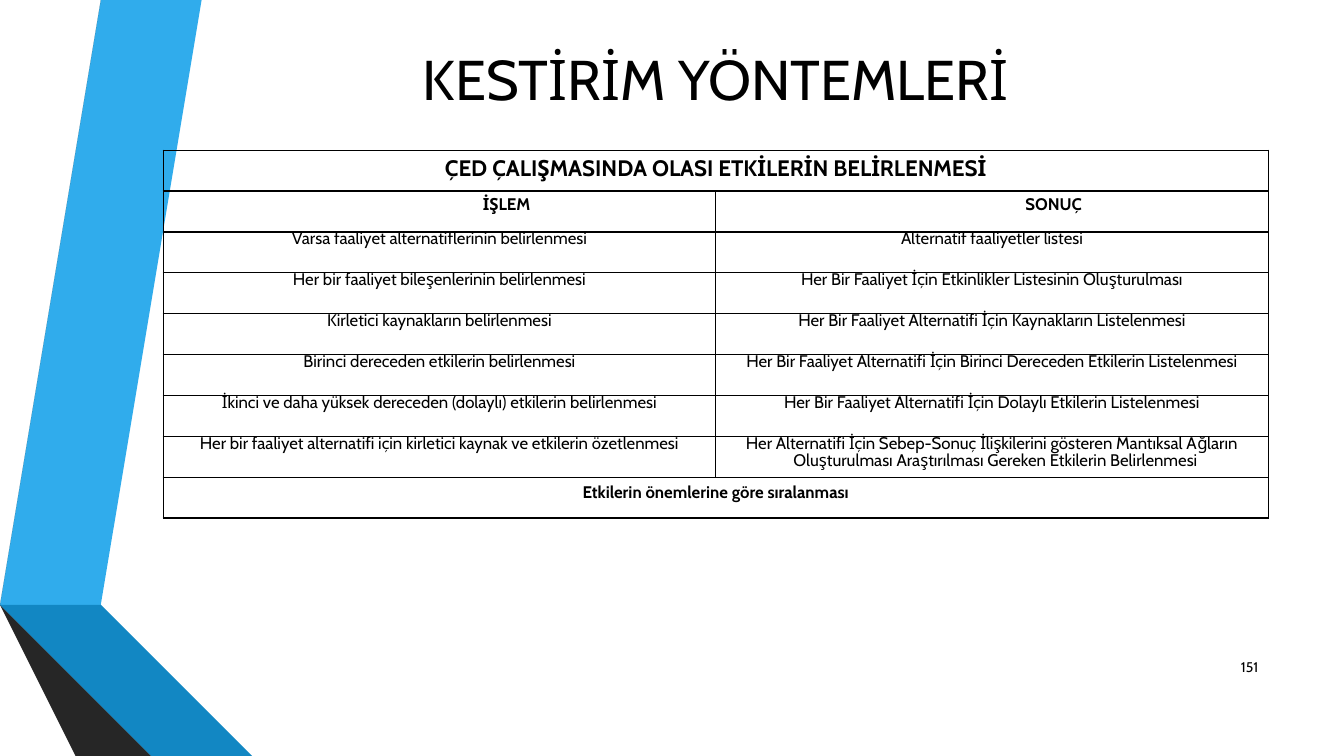
from lxml import etree
from pptx import Presentation
from pptx.dml.color import RGBColor
from pptx.enum.text import MSO_ANCHOR, PP_ALIGN
from pptx.oxml.ns import qn
from pptx.util import Inches, Pt

CENTER, RIGHT = PP_ALIGN.CENTER, PP_ALIGN.RIGHT
MIDDLE = MSO_ANCHOR.MIDDLE
BLACK = RGBColor(0x00, 0x00, 0x00)
SKY = RGBColor(0x30, 0xAC, 0xEC)
BLUE = RGBColor(0x12, 0x87, 0xC3)
NAVY = RGBColor(0x0C, 0x5A, 0x82)
GRAY = RGBColor(0x59, 0x59, 0x59)
DARK_GRAY = RGBColor(0x40, 0x40, 0x40)
CHARCOAL = RGBColor(0x26, 0x26, 0x26)

WIDTH, HEIGHT = 13.33, 7.5
LEFT, CONTENT_WIDTH = 1.62, 10.96
TABLE_TOP, ROW_HEIGHT = 1.49, 3.65 / 9
COLUMN_WIDTH = CONTENT_WIDTH / 2

RIBBONS = [
    (SKY, [(0.5, 5.78), (0.77, 5.83), (1.73, 0), (1.45, 0)]),
    (GRAY, [(1.39, 0), (1.11, 0), (0.16, 5.73), (0.44, 5.77)]),
    (CHARCOAL, [(0.16, 5.73), (1.45, HEIGHT), (1.51, HEIGHT)]),
    (NAVY, [(0.5, 5.79), (2.08, HEIGHT), (2.14, HEIGHT)]),
    (BLUE, [(0.5, 5.78), (2.14, HEIGHT), (2.83, HEIGHT), (0.77, 5.83)]),
    (DARK_GRAY, [(2.02, HEIGHT), (0.48, 5.83), (0.44, 5.77), (0.16, 5.73), (1.51, HEIGHT)]),
]

TABLE_TITLE = "ÇED ÇALIŞMASINDA OLASI ETKİLERİN BELİRLENMESİ"
TABLE_FOOTER = "Etkilerin önemlerine göre sıralanması"
HEADERS = [("İŞLEM", 1.33), ("SONUÇ", 1.22)]
STEPS = [
    ("Varsa faaliyet alternatiflerinin belirlenmesi", "Alternatif faaliyetler listesi"),
    ("Her bir faaliyet bileşenlerinin belirlenmesi",
     "Her Bir Faaliyet İçin Etkinlikler Listesinin Oluşturulması"),
    ("Kirletici kaynakların belirlenmesi",
     "Her Bir Faaliyet Alternatifi İçin Kaynakların Listelenmesi"),
    ("Birinci dereceden etkilerin belirlenmesi",
     "Her Bir Faaliyet Alternatifi İçin Birinci Dereceden Etkilerin Listelenmesi"),
    ("İkinci ve daha yüksek dereceden (dolaylı) etkilerin belirlenmesi",
     "Her Bir Faaliyet Alternatifi İçin Dolaylı Etkilerin Listelenmesi"),
    ("Her bir faaliyet alternatifi için kirletici kaynak ve etkilerin özetlenmesi",
     "Her Alternatifi İçin Sebep-Sonuç İlişkilerini gösteren Mantıksal Ağların "
     "Oluşturulması Araştırılması Gereken Etkilerin Belirlenmesi"),
]


def write_text(frame, text, size=12, bold=False, align=CENTER, margin=0, indent=0, spacing=None):
    """Fill a text frame; margin and indent are in inches."""
    frame.word_wrap = True
    paragraph = frame.paragraphs[0]
    paragraph.alignment = align
    paragraph.line_spacing = spacing
    if margin:
        properties = paragraph._p.get_or_add_pPr()
        properties.set("marL", str(Inches(margin)))
        properties.set("indent", str(Inches(indent)))
    run = paragraph.add_run()
    run.text = text
    run.font.name = "Cabin"
    run.font.size = Pt(size)
    run.font.bold = bold
    run.font.color.rgb = BLACK


def style_cell(cell):
    """Draw thin black borders and clear the fill."""
    properties = cell._tc.get_or_add_tcPr()
    for side in ("a:lnL", "a:lnR", "a:lnT", "a:lnB"):
        line = etree.SubElement(properties, qn(side), w=str(Pt(1)))
        fill = etree.SubElement(line, qn("a:solidFill"))
        etree.SubElement(fill, qn("a:srgbClr"), val=str(BLACK))
    cell.fill.background()


presentation = Presentation()
presentation.slide_width = Inches(WIDTH)
presentation.slide_height = Inches(HEIGHT)
slide = presentation.slides.add_slide(presentation.slide_layouts[6])

# Folded ribbons on the left
for color, points in RIBBONS:
    builder = slide.shapes.build_freeform(*points[0], scale=Inches(1))
    builder.add_line_segments(points[1:], close=True)
    ribbon = builder.convert_to_shape()
    ribbon.shadow.inherit = False
    ribbon.fill.solid()
    ribbon.fill.fore_color.rgb = color
    ribbon.line.fill.background()

# Title and page number
for text, box, size, align in [
    ("KESTİRİM YÖNTEMLERİ", (LEFT, 0.33, CONTENT_WIDTH, 0.9), 40, CENTER),
    ("151", (11.98, 6.42, 0.6, 0.4), 10, RIGHT),
]:
    shape = slide.shapes.add_textbox(*(Inches(length) for length in box))
    shape.text_frame.vertical_anchor = MIDDLE
    write_text(shape.text_frame, text, size=size, align=align)

# Table of steps and results
row_count = len(STEPS) + 3
table = slide.shapes.add_table(
    row_count, 2, Inches(LEFT), Inches(TABLE_TOP),
    Inches(CONTENT_WIDTH), Inches(ROW_HEIGHT * row_count)).table
table.first_row = table.horz_banding = False
for column in table.columns:
    column.width = Inches(COLUMN_WIDTH)
for row in table.rows:
    row.height = Inches(ROW_HEIGHT)
for cell in table.iter_cells():
    style_cell(cell)

for row_index, text, size in [(0, TABLE_TITLE, 16), (row_count - 1, TABLE_FOOTER, 12)]:
    cell = table.cell(row_index, 0)
    cell.merge(table.cell(row_index, 1))
    write_text(cell.text_frame, text, size=size, bold=True)

for row_index in range(1, row_count - 1):
    for column_index in range(2):
        cell = table.cell(row_index, column_index)
        cell.margin_left = cell.margin_right = Inches(0.01)
        cell.margin_top = cell.margin_bottom = 0
        if row_index == 1:
            text, margin = HEADERS[column_index]
            write_text(cell.text_frame, text, bold=True, margin=margin, spacing=1.15)
        else:
            write_text(cell.text_frame, STEPS[row_index - 2][column_index],
                       margin=0.07, indent=-0.46, spacing=Pt(12.2))

presentation.save("out.pptx")
